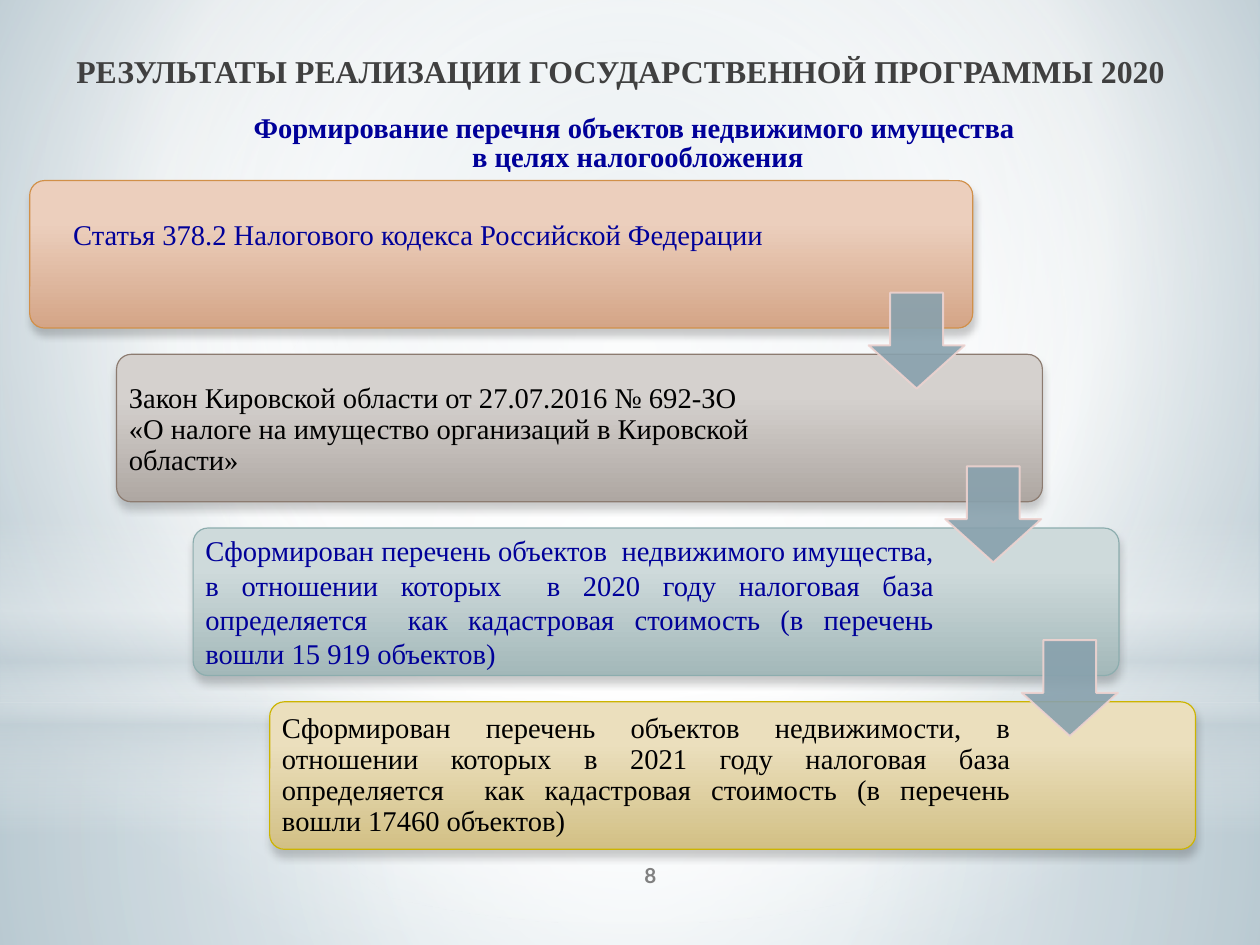
import dataclasses

import pptx
import pptx.dml.color
import pptx.enum.shapes
import pptx.enum.text
import pptx.oxml
import pptx.oxml.ns
import pptx.util

Inches = pptx.util.Inches
Align = pptx.enum.text.PP_ALIGN
Anchor = pptx.enum.text.MSO_ANCHOR
Preset = pptx.enum.shapes.MSO_SHAPE
qn = pptx.oxml.ns.qn


@dataclasses.dataclass(frozen=True)
class Theme:
    serif: str = "Times New Roman"
    sans: str = "Lato"
    title_size: int = 20
    text_size: int = 18
    number_size: int = 13
    title: str = "404040"
    navy: str = "000099"
    black: str = "000000"
    number: str = "808080"
    arrow: str = "88A1AD"
    arrow_line: str = "EED3D0"
    white: str = "FFFFFF"
    mist: str = "C5D1D7"
    sky: str = "B8CAD3"
    steel: str = "8FAEBD"


@dataclasses.dataclass(frozen=True)
class Step:
    paragraphs: tuple
    color: str
    light: str
    dark: str
    outline: str
    align: Align = Align.LEFT
    line_spacing: float = 0.9
    margin_right: float = 1.58
    margin_bottom: float = 0.07


THEME = Theme()
# The page is 28 by 21 centimetres
PAGE_WIDTH, PAGE_HEIGHT = pptx.util.Cm(28), pptx.util.Cm(21)
CENTER = (50, 50, 50, 50)

STEPS = (
    Step(("Статья 378.2 Налогового кодекса Российской Федерации",),
         THEME.navy, "ECCFBD", "D4A587", "D19049", Align.CENTER,
         margin_right=1.52, margin_bottom=0.38),
    Step(("Закон Кировской области от 27.07.2016 № 692-ЗО",
          "«О налоге на имущество организаций в Кировской области»"),
         THEME.black, "D5D1CE", "AEA7A2", "8C7B70", margin_bottom=0.03),
    Step(("Сформирован перечень объектов  недвижимого имущества, в отношении "
          "которых  в 2020 году налоговая база определяется  как кадастровая "
          "стоимость (в перечень вошли 15 919 объектов)",),
         THEME.navy, "CEDADB", "A3B8B9", "8CADAE", Align.JUSTIFY, 1.0),
    Step(("Сформирован перечень объектов недвижимости, в отношении которых "
          "в 2021 году налоговая база определяется  как кадастровая "
          "стоимость (в перечень вошли 17460 объектов) ",),
         THEME.black, "EBDFBD", "D2C085", "CCB400", Align.JUSTIFY),
)


def rgb(color):
    return pptx.dml.color.RGBColor.from_string(color)


def set_gradient(fill, properties, stops, focus=None):
    """Stops are (position, colour, opacity); without a focus it runs downwards."""
    fill.gradient()
    stop_xml = "".join(
        f'<a:gs pos="{position * 1000}"><a:srgbClr val="{color}">'
        f'<a:alpha val="{opacity * 1000}"/></a:srgbClr></a:gs>'
        for position, color, opacity in stops)
    direction = '<a:lin ang="5400000" scaled="0"/>'
    if focus:
        sides = " ".join(f'{side}="{value * 1000}"' for side, value in zip("ltrb", focus))
        direction = f'<a:path path="circle"><a:fillToRect {sides}/></a:path>'
    gradient = pptx.oxml.parse_xml(
        f'<a:gradFill {pptx.oxml.ns.nsdecls("a")} rotWithShape="1">'
        f'<a:gsLst>{stop_xml}</a:gsLst>{direction}</a:gradFill>')
    properties.replace(properties.find(qn("a:gradFill")), gradient)


def set_opacity(properties, opacity):
    color = properties.find(qn("a:solidFill")).find(qn("a:srgbClr"))
    color.append(pptx.oxml.parse_xml(
        f'<a:alpha {pptx.oxml.ns.nsdecls("a")} val="{opacity * 1000}"/>'))


def add_shadow(shape):
    shape.element.spPr.find(qn("a:effectLst")).append(pptx.oxml.parse_xml(
        f'<a:outerShdw {pptx.oxml.ns.nsdecls("a")} blurRad="63500" dist="50800" '
        'dir="5400000" rotWithShape="0"><a:srgbClr val="000000">'
        '<a:alpha val="20000"/></a:srgbClr></a:outerShdw>'))


def add_preset(slide, preset, box):
    shape = slide.shapes.add_shape(preset, *map(Inches, box))
    shape.shadow.inherit = False
    return shape


def write_text(shape, paragraphs, size, color, font=THEME.serif, bold=False,
               align=Align.CENTER, anchor=Anchor.TOP, line_spacing=1.0,
               margins=(0.11, 0.06, 0.11, 0.06)):
    frame = shape.text_frame
    frame.text = "\n".join(paragraphs)
    frame.word_wrap = True
    frame.auto_size = pptx.enum.text.MSO_AUTO_SIZE.NONE
    frame.vertical_anchor = anchor
    (frame.margin_left, frame.margin_top,
     frame.margin_right, frame.margin_bottom) = map(Inches, margins)
    for paragraph in frame.paragraphs:
        paragraph.alignment = align
        paragraph.line_spacing = line_spacing
        for run in paragraph.runs:
            run.font.name = font
            run.font.size = pptx.util.Pt(size)
            run.font.bold = bold
            run.font.color.rgb = rgb(color)


def add_backdrop(slide, box):
    left, top, width, height = box
    white, mist = THEME.white, THEME.mist
    fill = slide.background.fill
    fill.gradient()
    set_gradient(fill, next(slide.element.iter(qn("p:bgPr"))),
                 ((0, THEME.sky, 100), (60, white, 100), (100, THEME.steel, 100)),
                 (20, 10, 20, 60))
    horizon = 6.15
    layers = (
        (Preset.RECTANGLE, horizon, height - horizon,
         ((0, white, 91), (37, white, 76), (100, mist, 79)), CENTER),
        (Preset.RECTANGLE, 0, horizon,
         ((0, white, 89), (48, white, 62), (100, mist, 79)), CENTER),
        (Preset.RECTANGLE, 4.54, 2.76,
         ((0, white, 0), (29, white, 30), (45, mist, 40),
          (55, white, 26), (65, mist, 60), (100, white, 0)), None),
        (Preset.OVAL, 1.93, horizon, ((0, white, 100), (56, white, 0)), CENTER),
    )
    for preset, offset, layer_height, stops, focus in layers:
        layer = add_preset(slide, preset, (left, top + offset, width, layer_height))
        layer.line.fill.background()
        set_gradient(layer.fill, layer.element.spPr, stops, focus)


def add_heading(slide, box):
    left, top, width, height = box
    # Title, brought in front of the backdrop
    title = slide.shapes.title
    title.element.getparent().append(title.element)
    title.left, title.top, title.width, title.height = map(Inches, (left, top, width, 0.67))
    write_text(title, ["РЕЗУЛЬТАТЫ РЕАЛИЗАЦИИ ГОСУДАРСТВЕННОЙ ПРОГРАММЫ 2020"],
               THEME.title_size, THEME.title, bold=True)
    # Subtitle
    subtitle = slide.shapes.add_textbox(
        *map(Inches, (left + 0.23, top + 0.56, width - 0.16, height - 0.56)))
    write_text(subtitle, ["Формирование перечня объектов недвижимого имущества ",
                          "в целях налогообложения"],
               THEME.text_size, THEME.navy, bold=True, line_spacing=0.87,
               margins=(0.1, 0.05, 0.1, 0.05))


def add_card(slide, step, box):
    card = add_preset(slide, Preset.ROUNDED_RECTANGLE, box)
    card.adjustments[0] = 0.1
    set_gradient(card.fill, card.element.spPr, ((28, step.light, 100), (100, step.dark, 100)))
    card.line.color.rgb = rgb(step.outline)
    card.line.width = pptx.util.Pt(0.75)
    add_shadow(card)
    write_text(card, step.paragraphs, THEME.text_size, step.color, align=step.align,
               anchor=Anchor.MIDDLE, line_spacing=step.line_spacing,
               margins=(0.07, 0.07, step.margin_right, step.margin_bottom))


def add_down_arrow(slide, box):
    arrow = add_preset(slide, Preset.DOWN_ARROW, box)
    arrow.adjustments[0], arrow.adjustments[1] = 0.55, 0.45
    arrow.fill.solid()
    arrow.fill.fore_color.rgb = rgb(THEME.arrow)
    arrow.line.color.rgb = rgb(THEME.arrow_line)
    arrow.line.width = pptx.util.Pt(1.25)
    properties = arrow.element.spPr
    set_opacity(properties, 90)
    set_opacity(properties.find(qn("a:ln")), 90)


def add_staircase(slide, box):
    left, top, width, height = box
    step_right, step_down, card_height = 0.67, 1.52, 1.29
    card_width = width - 0.09 - 3 * step_right
    for index, step in enumerate(STEPS):
        # The first card reaches a little further on both sides
        indent, extra = (0.09 + index * step_right, 0) if index else (0, 0.15)
        add_card(slide, step, (left + indent, top + index * step_down,
                               card_width + extra, card_height))
    for index in range(len(STEPS) - 1):
        add_down_arrow(slide, (left + 7.34 + index * step_right,
                               top + 0.98 + index * step_down, 0.84, 0.84))


def add_page_number(slide, box):
    number = slide.shapes.add_textbox(*map(Inches, box))
    write_text(number, ["8"], THEME.number_size, THEME.number, THEME.sans, True,
               anchor=Anchor.MIDDLE)


def main():
    presentation = pptx.Presentation()
    presentation.slide_width, presentation.slide_height = PAGE_WIDTH, PAGE_HEIGHT
    slide = presentation.slides.add_slide(presentation.slide_layouts.get_by_name("Title Only"))
    add_backdrop(slide, (0, 0, PAGE_WIDTH.inches, PAGE_HEIGHT.inches))
    add_heading(slide, (0.5, 0.39, 9.86, 1.19))
    add_page_number(slide, (4.59, 7.44, 2.2, 0.44))
    add_staircase(slide, (0.26, 1.58, 10.2, 5.85))
    presentation.save("out.pptx")


if __name__ == "__main__":
    main()
